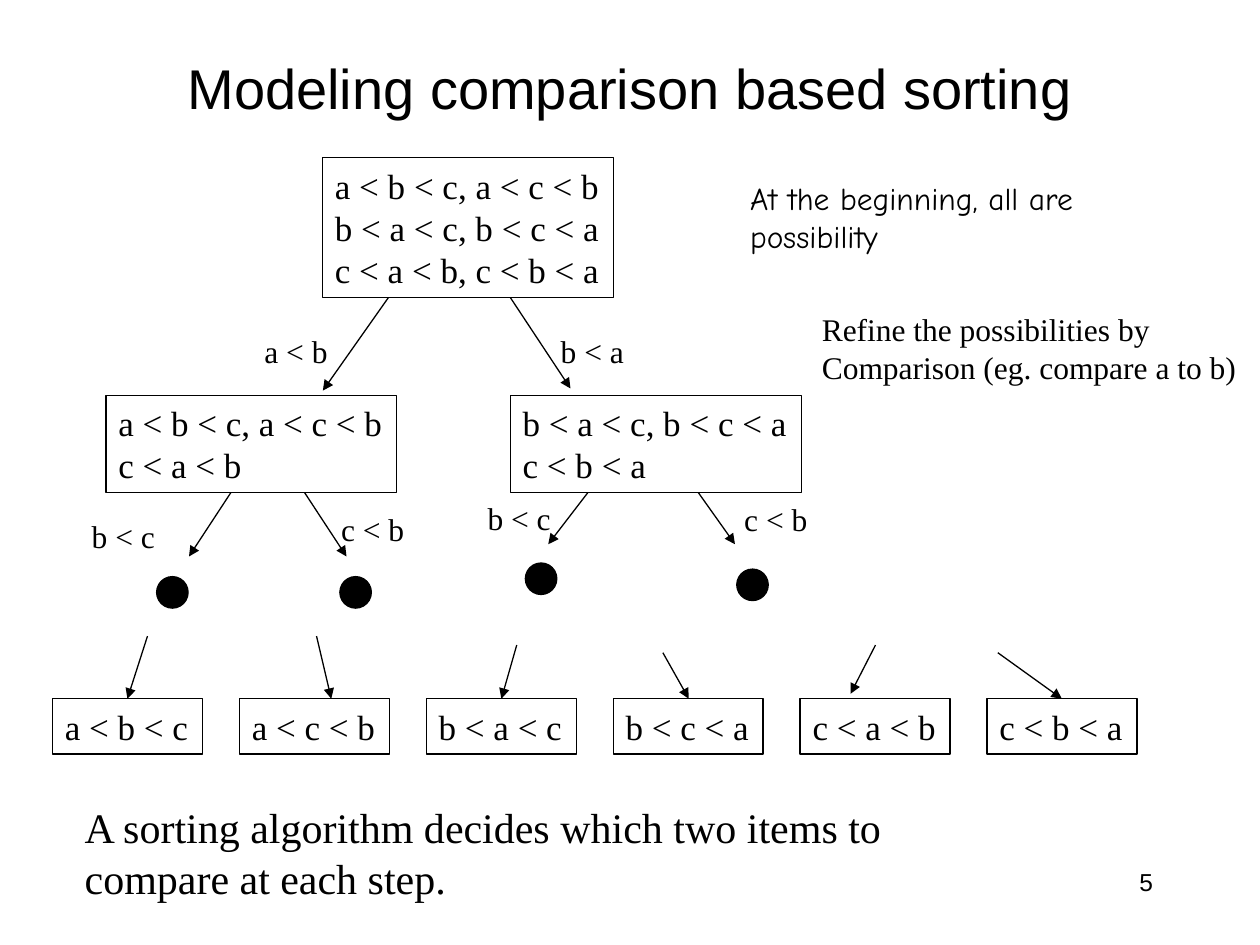
import pptx
import pptx.util
import pptx.dml.color
import pptx.enum.shapes
import pptx.enum.text
from lxml import etree
from pptx.util import Pt

SERIF = "Times New Roman"
BLACK = "000000"
SHAPES = pptx.enum.shapes.MSO_SHAPE
ALIGN = pptx.enum.text.PP_ALIGN


def color(hex_string):
    return pptx.dml.color.RGBColor.from_string(hex_string)


def write(shape, lines, size, font=SERIF, align=ALIGN.LEFT, wrap=True):
    """Fill the shape with one paragraph per line."""
    frame = shape.text_frame
    frame.text = "\n".join(lines)
    frame.word_wrap = wrap
    for para in frame.paragraphs:
        para.alignment = align
        para.font.size = Pt(size)
        para.font.name = font
        para.font.color.rgb = color(BLACK)


deck = pptx.Presentation()
deck.slide_width, deck.slide_height = Pt(720), Pt(540)
page = deck.slides.add_slide(deck.slide_layouts[5])

title = page.shapes.title
title.left, title.top, title.width, title.height = Pt(54), Pt(19.5), Pt(612), Pt(60)
write(title, ["Modeling comparison based sorting"], 32, "Arial", ALIGN.CENTER)
title.text_frame.vertical_anchor = pptx.enum.text.MSO_ANCHOR.MIDDLE

# Decision tree: left, top, width, height, orderings still possible
nodes = [
    (184.3, 90, 166.3, 80, ["a < b < c, a < c < b", "b < a < c, b < c < a", "c < a < b, c < b < a"]),
    (60.5, 226, 166.3, 55.4, ["a < b < c, a < c < b", "c < a < b"]),
    (291.6, 226, 166.3, 55.4, ["b < a < c, b < c < a", "c < b < a"]),
]
leaves = ["a < b < c", "a < c < b", "b < a < c", "b < c < a", "c < a < b", "c < b < a"]
for index, ordering in enumerate(leaves):
    nodes.append((30 + 106.8 * index, 399.3, 85.7, 31.7, [ordering]))

for left, top, width, height, orderings in nodes:
    box = page.shapes.add_shape(SHAPES.RECTANGLE, Pt(left), Pt(top), Pt(width), Pt(height))
    box.shadow.inherit = False
    box.fill.background()
    box.line.color.rgb = color(BLACK)
    box.line.width = Pt(0.75)
    write(box, orderings, 20, wrap=False)

arrows = [
    (222, 170, 184.5, 223.2), (291.6, 170, 326, 222),
    (132, 281.4, 108, 318), (174, 281.4, 198, 318),
    (336, 281.4, 313.3, 311), (399, 281.4, 420, 311),
    (84.3, 363.5, 72.8, 399.3), (180.9, 363.5, 189.3, 399.3),
    (295.3, 368.6, 286.5, 399.3), (378.8, 373, 393.6, 399.3),
    (500.3, 368.6, 486, 396.5), (570.2, 373, 606.8, 399.3),
]
for start_x, start_y, end_x, end_y in arrows:
    arrow = page.shapes.add_connector(
        pptx.enum.shapes.MSO_CONNECTOR.STRAIGHT, Pt(start_x), Pt(start_y), Pt(end_x), Pt(end_y))
    arrow.line.color.rgb = color(BLACK)
    arrow.line.width = Pt(0.75)
    etree.SubElement(arrow.line._get_or_add_ln(), pptx.oxml.ns.qn("a:tailEnd"), type="triangle")
    etree.SubElement(arrow._element.spPr, pptx.oxml.ns.qn("a:effectLst"))

for left, top in [(89.5, 329.5), (194.2, 329.5), (300.2, 321.7), (421, 325.2)]:
    dot = page.shapes.add_shape(SHAPES.OVAL, Pt(left), Pt(top), Pt(18), Pt(18))
    dot.shadow.inherit = False
    dot.fill.solid()
    dot.fill.fore_color.rgb = color(BLACK)
    dot.line.color.rgb = color(BLACK)
    dot.line.width = Pt(0.75)

# Comparison outcomes beside the arrows
outcomes = [
    (144, 186, "a < b"), (313.3, 186, "b < a"), (45.3, 292.2, "b < c"),
    (187.8, 288, "c < b"), (271.5, 281.5, "b < c"), (418.2, 282, "c < b"),
]
for left, top, outcome in outcomes:
    label = page.shapes.add_textbox(Pt(left), Pt(top), Pt(62.5), Pt(28.8))
    write(label, [outcome], 18)

start_note = page.shapes.add_textbox(Pt(421.5), Pt(98.6), Pt(239), Pt(51))
write(start_note, ["At the beginning, all are possibility"], 18, "Comic Neue")
start_note.text_frame.paragraphs[0].space_before = Pt(3.6)

refine_note = page.shapes.add_textbox(Pt(462.5), Pt(173.5), Pt(254), Pt(51))
write(refine_note, ["Refine the possibilities by", "Comparison (eg. compare a to b)"], 18, wrap=False)

conclusion = page.shapes.add_textbox(Pt(41.3), Pt(454.5), Pt(546.5), Pt(65.5))
write(conclusion, ["A sorting algorithm decides which two items to compare at each step."], 24)

page_number = page.shapes.add_textbox(Pt(516), Pt(492), Pt(150), Pt(36))
write(page_number, ["5"], 14, "Arial", ALIGN.RIGHT)

deck.save("out.pptx")
